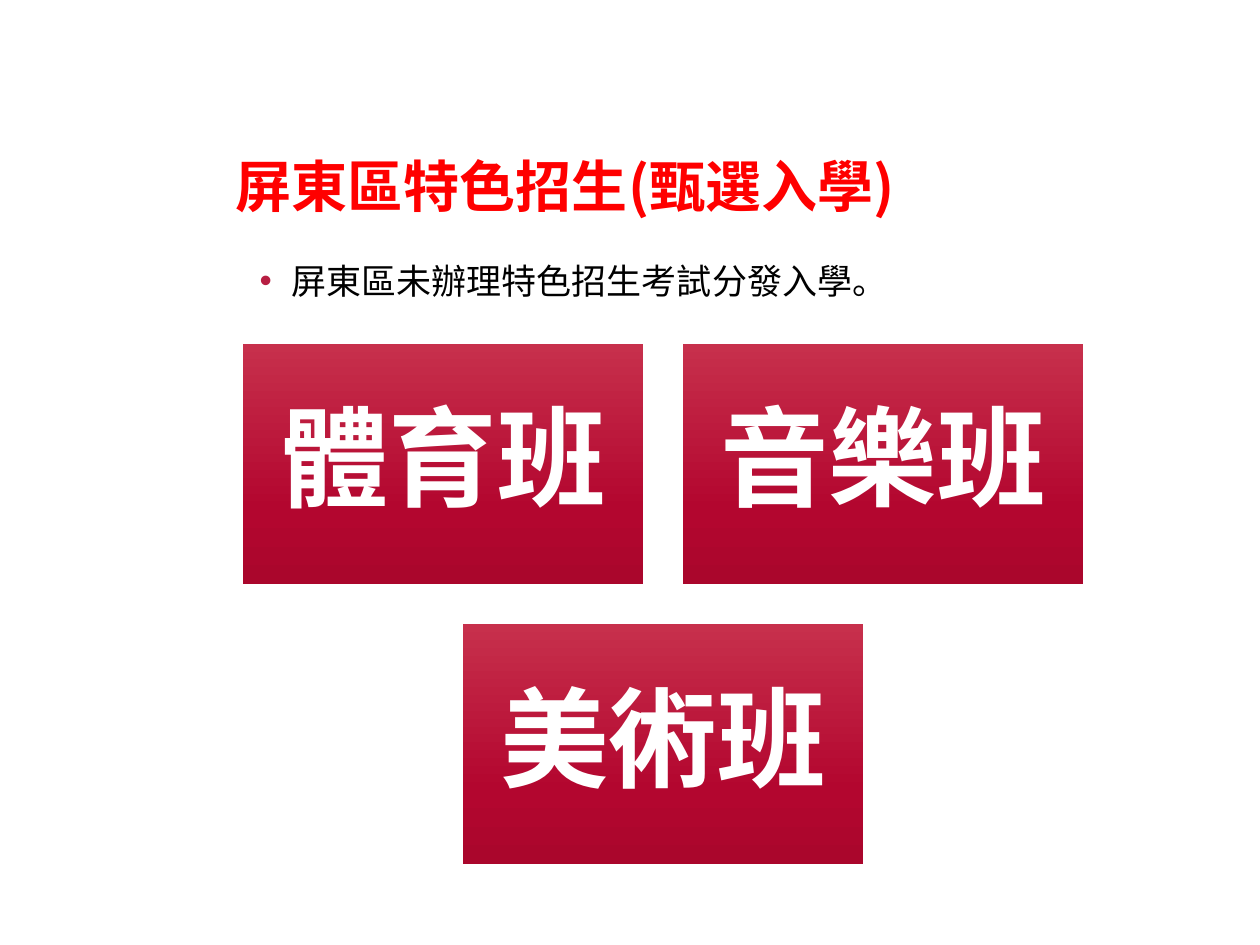
import copy

import pptx
import pptx.dml.color
import pptx.enum.shapes
import pptx.enum.text
import pptx.oxml
import pptx.oxml.ns
import pptx.util
from pptx.util import Cm

FONT = "Noto Sans CJK SC"
COLORS = {
    "title": "FF0000",
    "body": "000000",
    "bullet": "B71E42",
    "card_text": "FFFFFF",
    "card_top": "C7304C",
    "card_middle": "B3062F",
    "card_bottom": "AA062C",
}


def rgb(name):
    return pptx.dml.color.RGBColor.from_string(COLORS[name])


def format_text(para, size, color, bold=False):
    """Format every run, naming the font for Latin and East Asian text."""
    for span in para.runs:
        span.font.name = FONT
        span.font.size = pptx.util.Pt(size)
        span.font.bold = bold
        span.font.color.rgb = rgb(color)
        latin = span.font._element.find(pptx.oxml.ns.qn("a:latin"))
        east_asian = copy.deepcopy(latin)
        east_asian.tag = pptx.oxml.ns.qn("a:ea")
        latin.addnext(east_asian)


deck = pptx.Presentation()
deck.slide_width, deck.slide_height = Cm(25.4), Cm(19.05)
page = deck.slides.add_slide(deck.slide_layouts[1])

# Title
title = page.shapes.title
title.left, title.top, title.width, title.height = Cm(4.5), Cm(2.92), Cm(23.8), Cm(1.63)
title.text_frame.text = "屏東區特色招生(甄選入學)"
title.text_frame.vertical_anchor = pptx.enum.text.MSO_ANCHOR.TOP
title.text_frame.auto_size = pptx.enum.text.MSO_AUTO_SIZE.NONE
para = title.text_frame.paragraphs[0]
para.alignment = pptx.enum.text.PP_ALIGN.LEFT
format_text(para, 32, "title", bold=True)

# Bulleted statement
body = page.placeholders[1]
body.left, body.top, body.width, body.height = Cm(4.98), Cm(4.93), Cm(22.86), Cm(12.57)
body.text_frame.text = "屏東區未辦理特色招生考試分發入學。"
body.text_frame.auto_size = pptx.enum.text.MSO_AUTO_SIZE.NONE
para = body.text_frame.paragraphs[0]
para.line_spacing = 1.2
para.space_before = pptx.util.Pt(0)
properties = para._p.get_or_add_pPr()
properties.set("marL", str(Cm(0.64)))
properties.set("indent", str(Cm(-0.64)))
namespace = pptx.oxml.ns.nsdecls("a")
for bullet_xml in (
    f'<a:buClr {namespace}><a:srgbClr val="{COLORS["bullet"]}"/></a:buClr>',
    f'<a:buFont {namespace} typeface="Arial"/>',
    f'<a:buChar {namespace} char="•"/>',
):
    properties.append(pptx.oxml.parse_xml(bullet_xml))
format_text(para, 20, "body")

# Class cards: two above, one centred below
card_width, card_height, gap = Cm(8.06), Cm(4.84), Cm(0.81)
cards_left, cards_top = Cm(4.9), Cm(6.93)
cards = [("體育班", 0, 0), ("音樂班", 1, 0), ("美術班", 0.5, 1)]

for name, column, row in cards:
    card = page.shapes.add_shape(
        pptx.enum.shapes.MSO_SHAPE.RECTANGLE,
        int(cards_left + column * (card_width + gap)),
        int(cards_top + row * (card_height + gap)),
        card_width,
        card_height,
    )
    card.shadow.inherit = False
    card.line.fill.background()
    card.fill.gradient()
    card.fill.gradient_angle = 270
    first_stop = card._element.spPr.find(".//" + pptx.oxml.ns.qn("a:gs"))
    first_stop.addnext(copy.deepcopy(first_stop))
    stops = [(0, "card_top"), (0.69, "card_middle"), (1, "card_bottom")]
    for stop, (position, color) in zip(card.fill.gradient_stops, stops):
        stop.position = position
        stop.color.rgb = rgb(color)

    frame = card.text_frame
    frame.text = name
    frame.word_wrap = True
    frame.vertical_anchor = pptx.enum.text.MSO_ANCHOR.MIDDLE
    frame.margin_left = frame.margin_right = Cm(0.66)
    frame.margin_top = frame.margin_bottom = Cm(0.66)
    para = frame.paragraphs[0]
    para.alignment = pptx.enum.text.PP_ALIGN.CENTER
    para.line_spacing = 0.9
    format_text(para, 62, "card_text", bold=True)

deck.save("out.pptx")
